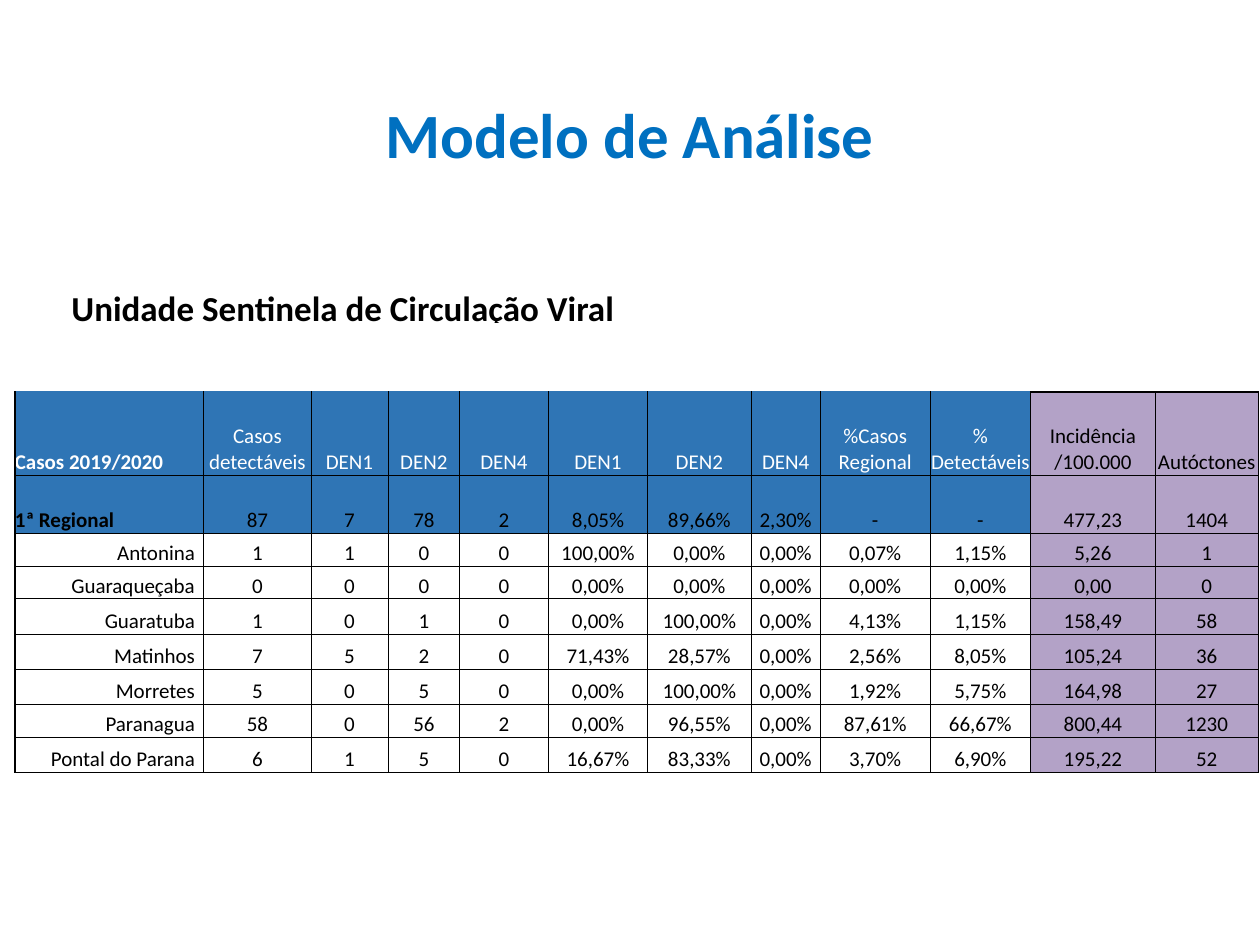
from dataclasses import dataclass

from lxml import etree
from pptx import Presentation
from pptx.dml.color import RGBColor
from pptx.enum.text import MSO_ANCHOR, MSO_AUTO_SIZE, PP_ALIGN
from pptx.oxml.ns import qn
from pptx.util import Cm, Pt

TOP, BOTTOM = MSO_ANCHOR.TOP, MSO_ANCHOR.BOTTOM
LEFT, CENTER, RIGHT = PP_ALIGN.LEFT, PP_ALIGN.CENTER, PP_ALIGN.RIGHT
NO_AUTOFIT = MSO_AUTO_SIZE.NONE


@dataclass(frozen=True)
class Theme:
    font: str = "Calibri"
    title: str = "0070C0"
    ink: str = "000000"
    paper: str = "FFFFFF"
    blue: str = "2F75B5"
    purple: str = "B3A2C7"
    title_size: float = 36
    subtitle_size: float = 20
    table_size: float = 12
    thin: float = 0.5
    thick: float = 1


@dataclass(frozen=True)
class Column:
    heading: str
    width: float


@dataclass(frozen=True)
class Row:
    label: str
    height: float
    values: str


THEME = Theme()
FIRST_PURPLE = 10
COLUMNS = [
    Column("Casos 2019/2020", 3.81),
    Column("Casos detectáveis", 2.16),
    Column("DEN1", 1.55),
    Column("DEN2", 1.45),
    Column("DEN4", 1.78),
    Column("DEN1", 2.01),
    Column("DEN2", 2.08),
    Column("DEN4", 1.4),
    Column("%Casos Regional", 2.21),
    Column("% Detectáveis", 2.03),
    Column("Incidência /100.000", 2.51),
    Column("Autóctones", 2.08),
]
HEADING_HEIGHT = 1.68
ROWS = [
    Row("1ª Regional", 1.17, "87 7 78 2 8,05% 89,66% 2,30% - - 477,23 1404"),
    Row("Antonina", 0.66, "1 1 0 0 100,00% 0,00% 0,00% 0,07% 1,15% 5,26 1"),
    Row("Guaraqueçaba", 0.66, "0 0 0 0 0,00% 0,00% 0,00% 0,00% 0,00% 0,00 0"),
    Row("Guaratuba", 0.71, "1 0 1 0 0,00% 100,00% 0,00% 4,13% 1,15% 158,49 58"),
    Row("Matinhos", 0.71, "7 5 2 0 71,43% 28,57% 0,00% 2,56% 8,05% 105,24 36"),
    Row("Morretes", 0.71, "5 0 5 0 0,00% 100,00% 0,00% 1,92% 5,75% 164,98 27"),
    Row("Paranagua", 0.66, "58 0 56 2 0,00% 96,55% 0,00% 87,61% 66,67% 800,44 1230"),
    Row("Pontal do Parana", 0.71, "6 1 5 0 16,67% 83,33% 0,00% 3,70% 6,90% 195,22 52"),
]


def rgb(color: str) -> RGBColor:
    return RGBColor.from_string(color)


def set_font(font, size: float, color: str, bold: bool) -> None:
    font.name = THEME.font
    font.size = Pt(size)
    font.bold = bold
    font.color.rgb = rgb(color)


def add_solid_fill(parent, color: str) -> None:
    fill = etree.SubElement(parent, qn("a:solidFill"))
    etree.SubElement(fill, qn("a:srgbClr"), val=color)


def add_border(cell, side: str, width: float, color: str) -> None:
    tc_pr = cell._tc.get_or_add_tcPr()
    ln = etree.SubElement(tc_pr, qn(f"a:ln{side}"), w=str(Pt(width)))
    add_solid_fill(ln, color)


def draw_heading(slide) -> None:
    sp = slide.shapes.title
    sp.left, sp.top, sp.width, sp.height = Cm(1.19), Cm(1.02), Cm(23.01), Cm(5.66)
    tf = sp.text_frame
    tf.word_wrap = True
    tf.auto_size = NO_AUTOFIT
    tf.vertical_anchor = TOP
    tf.margin_left = tf.margin_right = Cm(0.25)
    tf.margin_top, tf.margin_bottom = Cm(0.9), Cm(0.13)

    p = tf.paragraphs[0]
    p.alignment = CENTER
    r = p.add_run()
    r.text = "Modelo de Análise"
    set_font(r.font, THEME.title_size, THEME.title, True)

    p = tf.add_paragraph()
    p.alignment = LEFT
    p.space_before = Pt(66)
    r = p.add_run()
    r.text = "Unidade Sentinela de Circulação Viral"
    r.font.underline = True
    underline = etree.SubElement(r._r.get_or_add_rPr(), qn("a:uFill"))
    add_solid_fill(underline, THEME.paper)
    set_font(r.font, THEME.subtitle_size, THEME.ink, True)


def draw_borders(cell, row: int, col: int) -> None:
    last_row, last_col = len(ROWS), len(COLUMNS) - 1
    in_purple = col >= FIRST_PURPLE
    summary = row <= 1
    thick = {
        "L": col == 0 or (summary and col == FIRST_PURPLE),
        "R": col == last_col or (summary and col == FIRST_PURPLE - 1),
        "T": row == 2 or (row == 0 and in_purple),
        "B": row in (1, last_row),
    }
    for side, is_thick in thick.items():
        hidden = side == "T" and row == 0 and not in_purple
        add_border(cell, side, THEME.thick if is_thick else THEME.thin,
                   THEME.blue if hidden else THEME.ink)


def draw_cell(cell, text: str, row: int, col: int) -> None:
    summary = row <= 1
    is_label = col == 0
    indented = is_label and not summary
    cell.vertical_anchor = BOTTOM
    cell.margin_left = cell.margin_top = cell.margin_bottom = 0
    cell.margin_right = Cm(0.18) if indented else 0
    draw_borders(cell, row, col)
    if col >= FIRST_PURPLE or summary:
        cell.fill.solid()
        cell.fill.fore_color.rgb = rgb(THEME.purple if col >= FIRST_PURPLE else THEME.blue)
    else:
        cell.fill.background()
    p = cell.text_frame.paragraphs[0]
    p.text = text
    p.alignment = RIGHT if indented else LEFT if is_label else CENTER
    color = THEME.paper if row == 0 and col < FIRST_PURPLE else THEME.ink
    set_font(p.font, THEME.table_size, color, is_label and summary)


def draw_table(slide) -> None:
    heights = [HEADING_HEIGHT] + [row.height for row in ROWS]
    lines = [[column.heading for column in COLUMNS]]
    lines += [[row.label, *row.values.split()] for row in ROWS]
    width = sum(column.width for column in COLUMNS)
    table = slide.shapes.add_table(len(lines), len(COLUMNS), Cm(0.3), Cm(7.9),
                                   Cm(width), Cm(sum(heights))).table
    table.first_row = table.horz_banding = False
    for table_column, column in zip(table.columns, COLUMNS):
        table_column.width = Cm(column.width)
    for i, (height, texts) in enumerate(zip(heights, lines)):
        table.rows[i].height = Cm(height)
        for j, text in enumerate(texts):
            draw_cell(table.cell(i, j), text, i, j)


def main() -> None:
    prs = Presentation()
    prs.slide_width, prs.slide_height = Cm(25.4), Cm(19.05)
    slide = prs.slides.add_slide(prs.slide_layouts[5])
    draw_heading(slide)
    draw_table(slide)
    prs.save("out.pptx")


if __name__ == "__main__":
    main()
